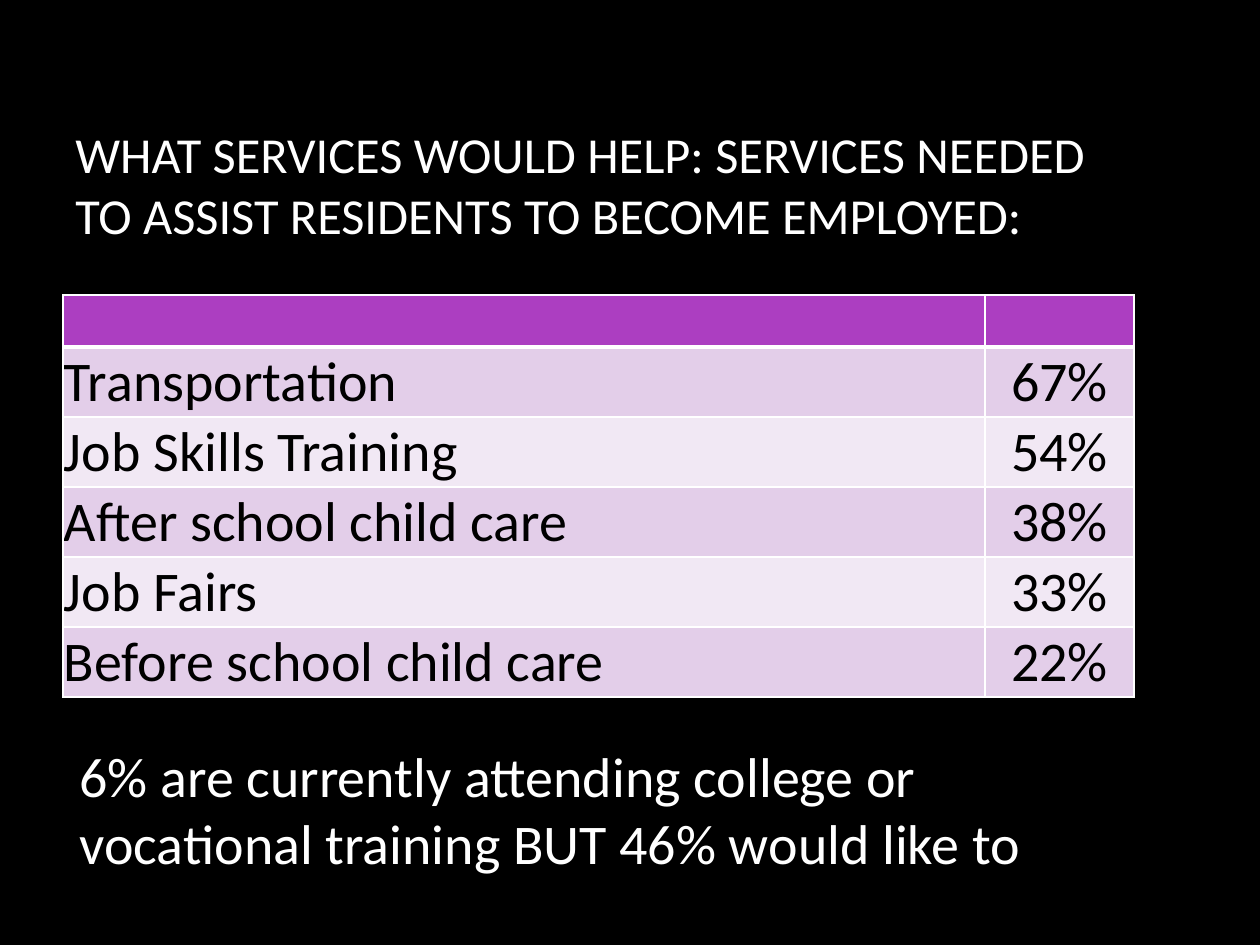
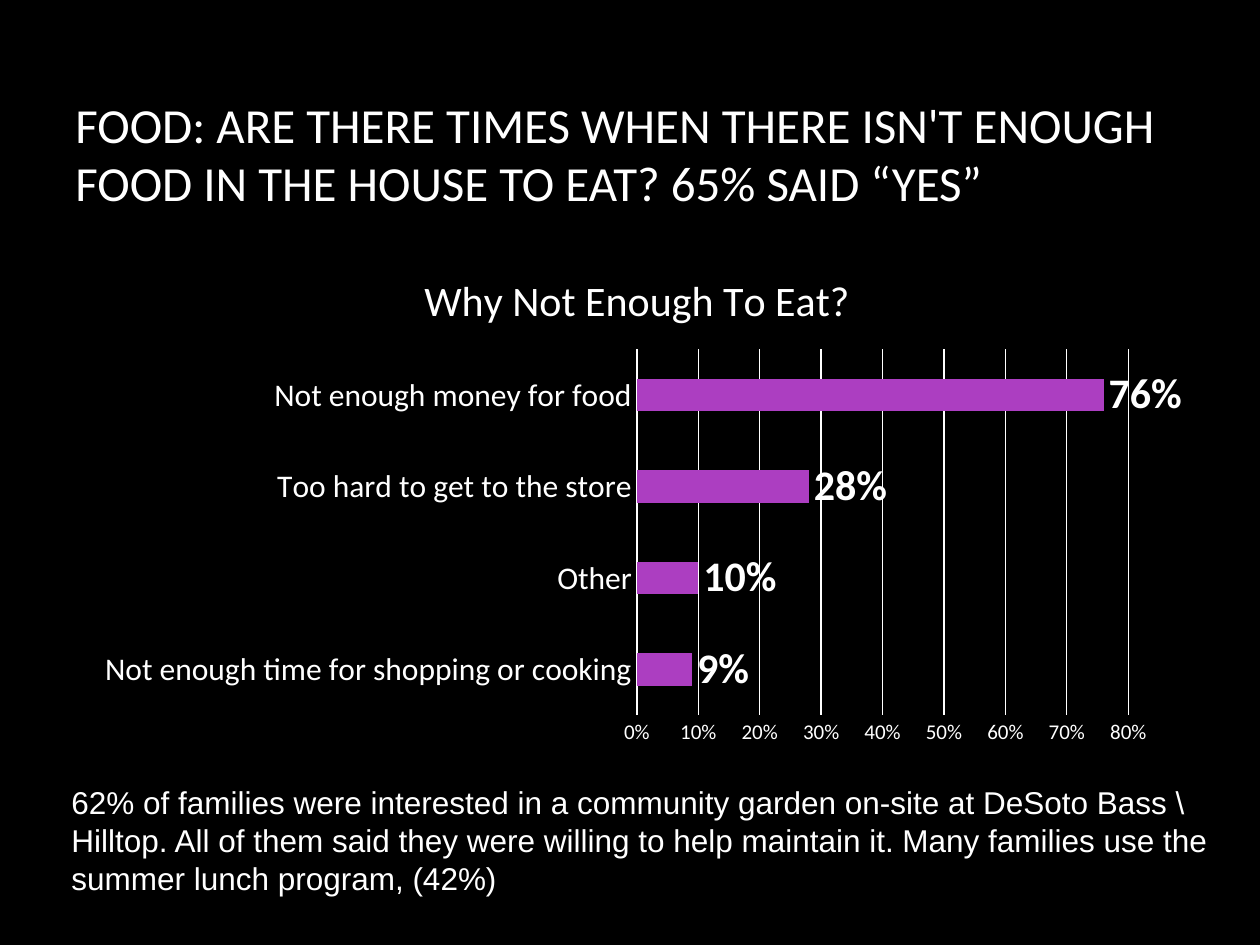
"""Build two survey slides: job services and food needs."""
from dataclasses import dataclass

from lxml.etree import SubElement
from pptx import Presentation
from pptx.chart.data import CategoryChartData as ChartData
from pptx.dml.color import RGBColor as RGB
from pptx.enum.chart import XL_CHART_TYPE as Kind
from pptx.enum.chart import XL_LABEL_POSITION as Spot
from pptx.enum.chart import XL_TICK_MARK as Tick
from pptx.enum.text import MSO_ANCHOR as Anchor
from pptx.enum.text import PP_ALIGN as Align
from pptx.oxml.ns import qn
from pptx.util import Emu, Pt


@dataclass(frozen=True)
class Theme:
    """Hold shared colours, fonts and type sizes."""
    back: str = "000000"
    ink: str = "FFFFFF"
    dark: str = "000000"
    main: str = "AC3EC1"
    bands: tuple = ("E3CEE9", "F1E8F4")
    face: str = "Calibri"
    plain: str = "Arial"
    big: float = 32
    head: float = 28.8
    title: float = 28
    mid: float = 24
    note: float = 18
    tiny: float = 12


T = Theme()
SCALE = 914400 / 126
PAGE = (1260, 945)

JOBS = {
    "title": ("WHAT SERVICES WOULD HELP: SERVICES NEEDED "
              "TO ASSIST RESIDENTS TO BECOME EMPLOYED:"),
    "title_box": (63, 84, 1071, 200),
    "rows": [
        ("Transportation", "67%"),
        ("Job Skills Training", "54%"),
        ("After school child care", "38%"),
        ("Job Fairs", "33%"),
        ("Before school child care", "22%"),
    ],
    "cols": (922, 149),
    "corner": (63, 295),
    "heights": (52, 70),
    "note": ["6% are currently attending college or",
             "vocational training BUT 46% would like to"],
    "note_box": (67, 735, 978, 149),
}
FOOD = {
    "title": ("FOOD: ARE THERE TIMES WHEN THERE ISN'T ENOUGH "
              "FOOD IN THE HOUSE TO EAT? 65% SAID “YES”"),
    "title_box": (63, 53, 1124, 200),
    "name": "Why Not Enough To Eat?",
    "bars": [
        ("Not enough time for shopping or cooking", 0.09),
        ("Other", 0.1),
        ("Too hard to get to the store", 0.28),
        ("Not enough money for food", 0.76),
    ],
    "chart_box": (91, 248, 1092, 508),
    "plot": {"x": 0.5, "y": 0.2, "w": 0.45, "h": 0.72},
    "note": ["62% of families were interested in a community garden on-site "
             "at DeSoto Bass \\ Hilltop. All of them said they were willing "
             "to help maintain it. Many families use the summer lunch "
             "program, (42%)"],
    "note_box": (59, 777, 1181, 127),
}


def px(*nums):
    """Turn px into EMU."""
    return [Emu(round(n * SCALE)) for n in nums]


def put(item, **vals):
    """Set each named value on an item."""
    for key, val in vals.items():
        setattr(item, key, val)


def style(font, size, tint=T.ink, face=T.face, bold=False):
    """Give a font its look."""
    put(font, size=Pt(size), name=face, bold=bold)
    font.color.rgb = RGB.from_string(tint)


def paint(fill, tint):
    """Fill with one colour."""
    fill.solid()
    fill.fore_color.rgb = RGB.from_string(tint)


def rule(line):
    """Draw a thin light line."""
    line.width = Pt(0.75)
    line.color.rgb = RGB.from_string(T.ink)


def write(slide, box, lines, size, face=T.face, anchor=Anchor.TOP):
    """Add a text box with one paragraph a line."""
    frame = slide.shapes.add_textbox(*px(*box)).text_frame
    put(frame, word_wrap=True, vertical_anchor=anchor, text="\n".join(lines))
    for para in frame.paragraphs:
        style(para.font, size, face=face)


def start(deck, data, size):
    """Add a dark slide with its title."""
    slide = deck.slides.add_slide(deck.slide_layouts[6])
    paint(slide.background.fill, T.back)
    write(slide, data["title_box"], [data["title"]], size,
          anchor=Anchor.MIDDLE)
    return slide


def edge(cell, top, base):
    """Border a cell with given top and base widths."""
    props = cell._tc.get_or_add_tcPr()
    for side, width in zip("LRTB", (1, 1, top, base)):
        line = SubElement(props, qn(f"a:ln{side}"), w=str(Pt(width)))
        fill = SubElement(line, qn("a:solidFill"))
        SubElement(fill, qn("a:srgbClr"), val=T.ink)


def grid(slide, data):
    """Add the table of services."""
    rows = [("", "")] + data["rows"]
    first, rest = data["heights"]
    tall = [first] + [rest] * len(data["rows"])
    size = (sum(data["cols"]), sum(tall))
    table = slide.shapes.add_table(
        len(rows), 2, *px(*data["corner"], *size)).table
    for col, wide in zip(table.columns, px(*data["cols"])):
        col.width = wide
    for r, (row, high) in enumerate(zip(rows, px(*tall))):
        table.rows[r].height = high
        for c, text in enumerate(row):
            cell = table.cell(r, c)
            edge(cell, 3 if r == 1 else 1, 3 if r == 0 else 1)
            paint(cell.fill, T.bands[(r - 1) % 2] if r else T.main)
            if r:
                fill_cell(cell, text, c)


def fill_cell(cell, text, col):
    """Write one body cell."""
    side = px(1)[0]
    put(cell, text=text, margin_left=side, margin_right=side,
        margin_top=side, margin_bottom=0,
        vertical_anchor=(Anchor.MIDDLE, Anchor.BOTTOM)[col])
    para = cell.text_frame.paragraphs[0]
    para.alignment = (Align.LEFT, Align.CENTER)[col]
    style(para.runs[0].font, T.big, T.dark)


def place(chart, spots):
    """Fix the inner plot area inside the chart."""
    area = chart._chartSpace.chart.plotArea
    old = area.find(qn("c:layout"))
    if old is not None:
        area.remove(old)
    layout = SubElement(area, qn("c:layout"))
    area.insert(0, layout)
    hand = SubElement(layout, qn("c:manualLayout"))
    modes = {"layoutTarget": "inner", "xMode": "edge", "yMode": "edge"}
    for key, val in {**modes, **spots}.items():
        SubElement(hand, qn(f"c:{key}"), val=str(val))


def graph(slide, data):
    """Add the bar chart of reasons."""
    names, vals = zip(*data["bars"])
    feed = ChartData(number_format="0%")
    feed.categories = names
    feed.add_series(data["name"], vals)
    chart = slide.shapes.add_chart(
        Kind.BAR_CLUSTERED, *px(*data["chart_box"]), feed).chart
    put(chart, has_legend=False, has_title=True)
    style(chart.font, T.tiny)
    head = chart.chart_title
    head.include_in_layout = False
    head.text_frame.text = data["name"]
    style(head.text_frame.paragraphs[0].runs[0].font, T.mid)

    cats, nums = chart.category_axis, chart.value_axis
    for axis, size in ((cats, T.note), (nums, T.tiny)):
        put(axis, major_tick_mark=Tick.NONE, minor_tick_mark=Tick.NONE)
        style(axis.tick_labels.font, size)
    put(cats, has_major_gridlines=False)
    rule(cats.format.line)
    put(nums, minimum_scale=0, maximum_scale=0.8, major_unit=0.1,
        has_major_gridlines=True)
    put(nums.tick_labels, number_format="0%", number_format_is_linked=False)
    nums.format.line.fill.background()
    rule(nums.major_gridlines.format.line)

    plot = chart.plots[0]
    put(plot, gap_width=182, vary_by_categories=False, has_data_labels=True)
    paint(plot.series[0].format.fill, T.main)
    tags = plot.data_labels
    put(tags, show_value=True, number_format="0%",
        number_format_is_linked=False, position=Spot.OUTSIDE_END)
    style(tags.font, T.mid, bold=True)
    place(chart, data["plot"])


def main():
    """Build and save the deck."""
    deck = Presentation()
    deck.slide_width, deck.slide_height = px(*PAGE)
    slide = start(deck, JOBS, T.head)
    grid(slide, JOBS)
    write(slide, JOBS["note_box"], JOBS["note"], T.big)
    slide = start(deck, FOOD, T.title)
    graph(slide, FOOD)
    write(slide, FOOD["note_box"], FOOD["note"], T.note, T.plain)
    deck.save("out.pptx")


if __name__ == "__main__":
    main()
